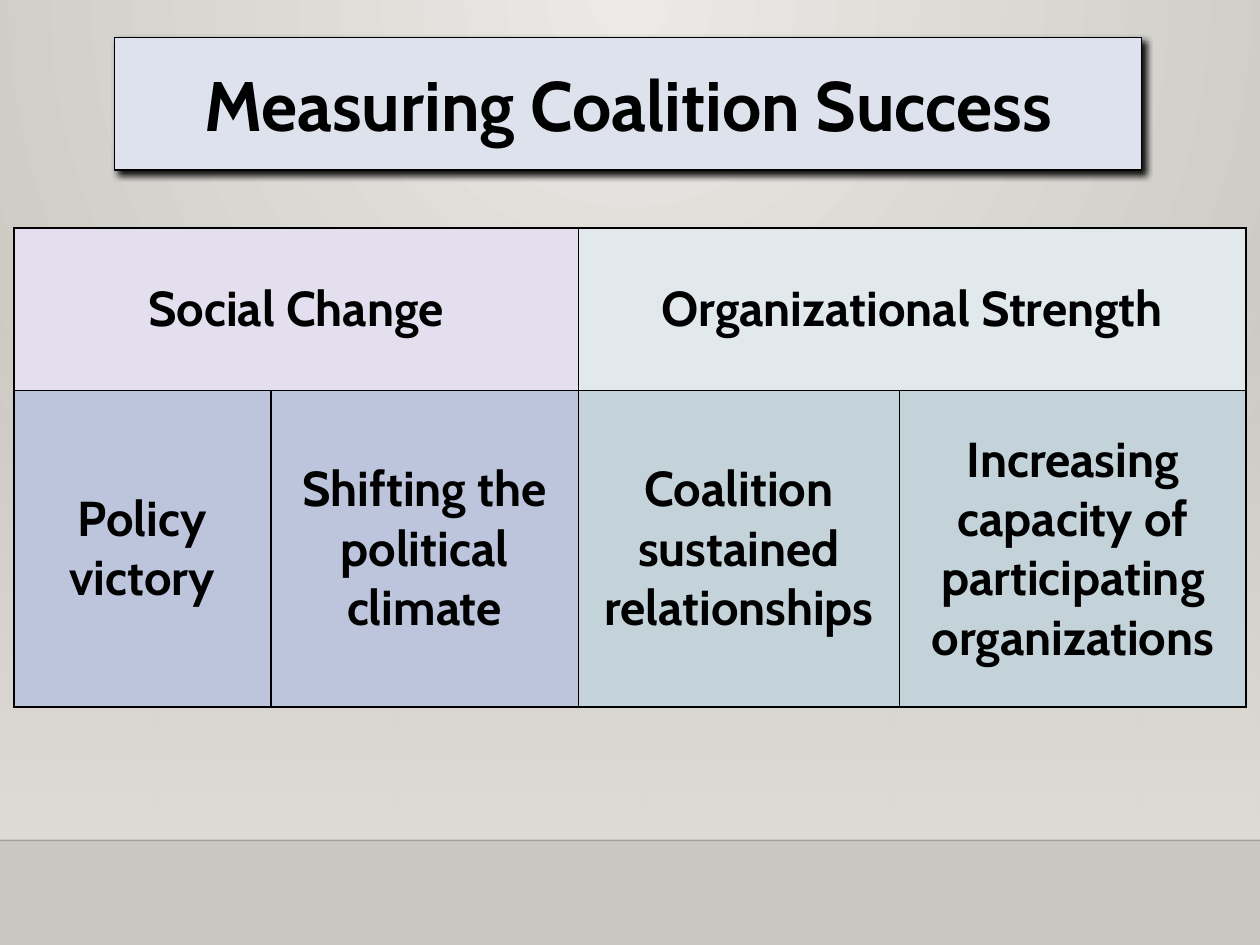
from lxml.etree import SubElement
from pptx import Presentation
from pptx.dml.color import RGBColor
from pptx.enum.shapes import MSO_CONNECTOR, MSO_SHAPE
from pptx.enum.text import MSO_ANCHOR, PP_ALIGN
from pptx.oxml import parse_xml
from pptx.oxml.ns import nsdecls, qn
from pptx.util import Inches, Pt

FONT = "Cabin"
BLACK = RGBColor(0x00, 0x00, 0x00)
TITLE_FILL = RGBColor(0xDE, 0xE2, 0xED)
LILAC = RGBColor(0xE4, 0xDF, 0xEF)
MIST = RGBColor(0xE1, 0xE9, 0xEC)
BLUE = RGBColor(0xBC, 0xC5, 0xDC)
TEAL = RGBColor(0xC3, 0xD3, 0xD9)
BG_LIGHT = RGBColor(0xEC, 0xEA, 0xE7)
BG_DARK = RGBColor(0xCA, 0xC7, 0xC1)
WALL = RGBColor(0xDF, 0xDB, 0xD5)

COL_WIDTHS = (2.04, 2.44, 2.55, 2.75)
ROW_HEIGHTS = (1.29, 2.51)
# Row, column, columns spanned, fill, paragraphs
CELLS = (
    (0, 0, 2, LILAC, ["Social Change"]),
    (0, 2, 2, MIST, ["Organizational Strength"]),
    (1, 0, 1, BLUE, ["Policy", "victory"]),
    (1, 1, 1, BLUE, ["Shifting the", "political climate"]),
    (1, 2, 1, TEAL, ["Coalition sustained relationships"]),
    (1, 3, 1, TEAL, ["Increasing capacity of participating organizations"]),
)


def write_text(tf, lines, size=28, color=BLACK, bold=True):
    tf.word_wrap = True
    for i, line in enumerate(lines):
        p = tf.paragraphs[0] if i == 0 else tf.add_paragraph()
        p.alignment = PP_ALIGN.CENTER
        r = p.add_run()
        r.text = line
        r.font.name, r.font.size, r.font.bold = FONT, Pt(size), bold
        r.font.color.rgb = color


def set_gradient(props, start, end, direction, start_alpha=100):
    """Replace the solid fill in props with a two-stop gradient."""
    grad = parse_xml(
        f'<a:gradFill {nsdecls("a")} rotWithShape="1"><a:gsLst>'
        f'<a:gs pos="0"><a:srgbClr val="{start}">'
        f'<a:alpha val="{start_alpha * 1000}"/></a:srgbClr></a:gs>'
        f'<a:gs pos="100000"><a:srgbClr val="{end}"/></a:gs>'
        f'</a:gsLst>{direction}</a:gradFill>')
    props.replace(props.find(qn("a:solidFill")), grad)


def add_background(s):
    fill = s.background.fill
    fill.solid()
    fill.fore_color.rgb = BG_DARK
    set_gradient(s.element.find(".//" + qn("p:bgPr")), BG_LIGHT, BG_DARK,
                 '<a:path path="circle"><a:fillToRect l="43000" t="0" '
                 'r="43000" b="100000"/></a:path>')


def add_box(s, x, y, w, h, fill):
    sp = s.shapes.add_shape(MSO_SHAPE.RECTANGLE, Inches(x), Inches(y),
                            Inches(w), Inches(h))
    sp.shadow.inherit = False
    sp.fill.solid()
    sp.fill.fore_color.rgb = fill
    sp.line.fill.background()
    return sp


def add_wall(s):
    sp = add_box(s, 0, 2.2, 10, 4.46, WALL)
    set_gradient(sp.element.spPr, WALL, WALL,
                 '<a:lin ang="5400000" scaled="0"/>', start_alpha=0)


def add_floor_line(s):
    line = s.shapes.add_connector(MSO_CONNECTOR.STRAIGHT, Inches(0),
                                  Inches(6.67), Inches(10), Inches(6.67))
    line.line.width = Pt(1)
    line.line.color.rgb = BLACK
    clr = line.element.find(".//" + qn("a:srgbClr"))
    SubElement(clr, qn("a:alpha"), val="20000")
    SubElement(line.element.spPr, qn("a:effectLst"))


def set_borders(cell, width=1):
    tc_pr = cell._tc.get_or_add_tcPr()
    for i, side in enumerate("LRTB"):
        tc_pr.insert(i, parse_xml(
            f'<a:ln{side} {nsdecls("a")} w="{Pt(width)}"><a:solidFill>'
            f'<a:srgbClr val="{BLACK}"/></a:solidFill></a:ln{side}>'))


def add_measures_table(s):
    table = s.shapes.add_table(
        len(ROW_HEIGHTS), len(COL_WIDTHS), Inches(0.11), Inches(1.81),
        Inches(sum(COL_WIDTHS)), Inches(sum(ROW_HEIGHTS))).table
    for col, width in zip(table.columns, COL_WIDTHS):
        col.width = Inches(width)
    for row, height in zip(table.rows, ROW_HEIGHTS):
        row.height = Inches(height)
    for row, col, span, fill, lines in CELLS:
        cell = table.cell(row, col)
        if span > 1:
            cell.merge(table.cell(row, col + span - 1))
        cell.vertical_anchor = MSO_ANCHOR.MIDDLE
        write_text(cell.text_frame, lines)
        for c in range(col, col + span):
            part = table.cell(row, c)
            part.fill.solid()
            part.fill.fore_color.rgb = fill
            set_borders(part)


def add_title(s):
    sp = add_box(s, 0.91, 0.3, 8.15, 1.05, TITLE_FILL)
    sp.line.color.rgb = BLACK
    sp.line.width = Pt(0.75)
    effects = sp.element.spPr.find(qn("a:effectLst"))
    effects.append(parse_xml(
        f'<a:outerShdw {nsdecls("a")} blurRad="{Pt(4)}" dist="{Pt(3)}" '
        f'dir="2700000" algn="tl" rotWithShape="0"><a:srgbClr val="{BLACK}">'
        '<a:alpha val="95000"/></a:srgbClr></a:outerShdw>'))
    sp.text_frame.vertical_anchor = MSO_ANCHOR.MIDDLE
    write_text(sp.text_frame, ["Measuring Coalition Success"], size=40)


def main():
    prs = Presentation()
    prs.slide_width, prs.slide_height = Inches(10), Inches(7.5)
    s = prs.slides.add_slide(prs.slide_layouts[6])
    # Backdrop
    add_background(s)
    add_wall(s)
    add_floor_line(s)
    # Content
    add_measures_table(s)
    add_title(s)
    prs.save("out.pptx")


if __name__ == "__main__":
    main()
